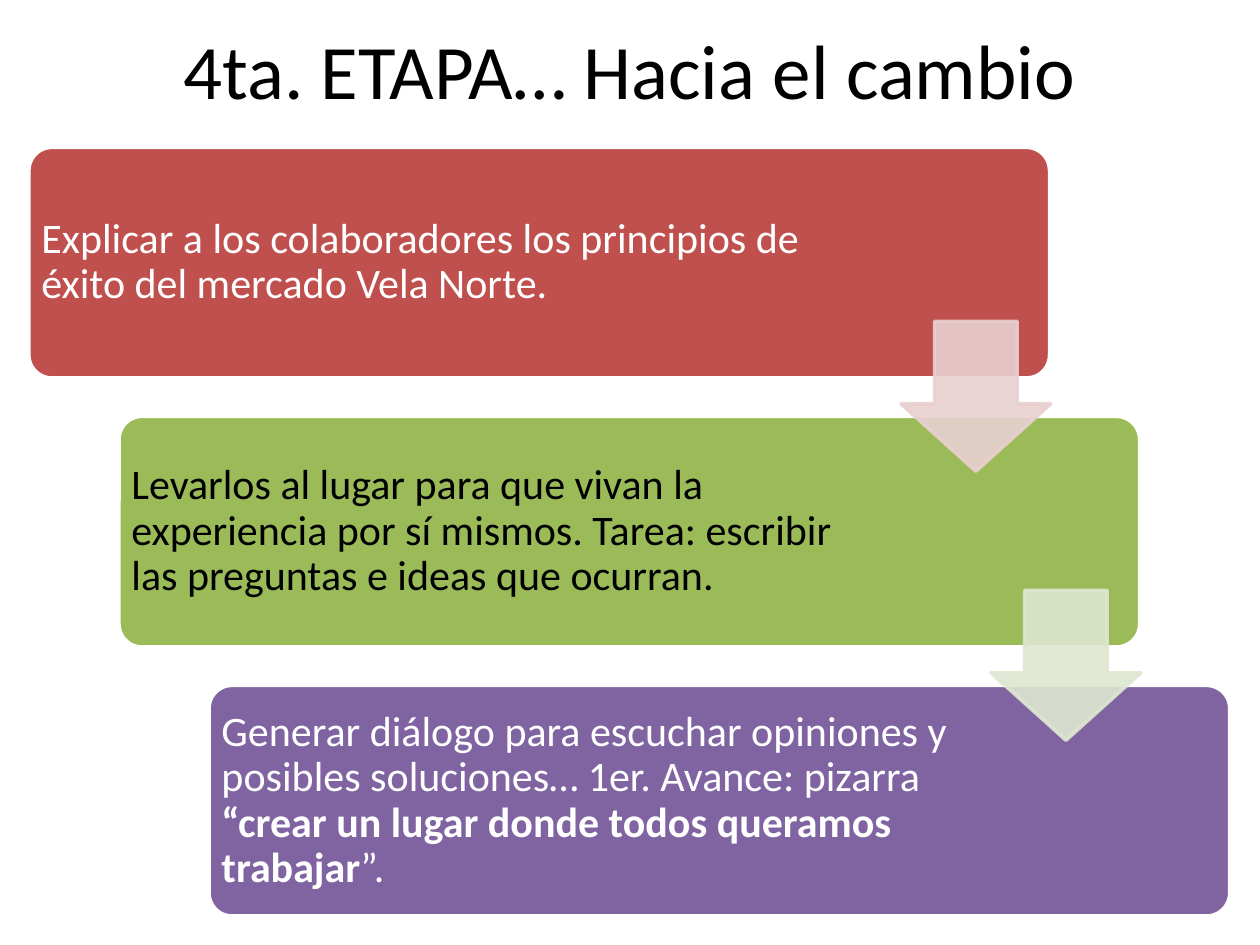
from lxml import etree
from pptx import Presentation
from pptx.dml.color import RGBColor
from pptx.enum.shapes import MSO_SHAPE
from pptx.enum.text import MSO_ANCHOR, PP_ALIGN
from pptx.oxml.ns import qn
from pptx.util import Inches, Pt

ROUND_RECT = MSO_SHAPE.ROUNDED_RECTANGLE
DOWN_ARROW = MSO_SHAPE.DOWN_ARROW
MIDDLE = MSO_ANCHOR.MIDDLE
LEFT, CENTER = PP_ALIGN.LEFT, PP_ALIGN.CENTER

FONT = "Calibri"
COLORS = {
    "white": "FFFFFF",
    "black": "000000",
    "red": "C0504D",
    "green": "9BBB59",
    "purple": "8064A2",
    "pale_red": "E8D0D0",
    "pale_green": "DEE7D1",
}

TITLE = "4ta. ETAPA… Hacia el cambio"
STEPS = [
    ("red", "white", "pale_red", 6.24, [
        ("Explicar a los colaboradores los principios de éxito del mercado Vela Norte.", False),
    ]),
    ("green", "black", "pale_green", 6.16, [
        ("Levarlos al lugar para que vivan la experiencia por sí mismos. "
         "Tarea: escribir las preguntas e ideas que ocurran.", False),
    ]),
    ("purple", "white", None, 6.16, [
        ("Generar diálogo para escuchar opiniones y posibles soluciones… "
         "1er. Avance: pizarra ", False),
        ("“crear un lugar donde todos queramos trabajar", True),
        ("”.", False),
    ]),
]


def rgb(name):
    """Return the named colour."""
    return RGBColor.from_string(COLORS[name])


def add_shape(s, kind, box, adjustments, fill, line, alpha=None):
    """Add a flat preset shape, with an opacity in percent if given."""
    sp = s.shapes.add_shape(kind, *map(Inches, box))
    sp.shadow.inherit = False
    for i, value in enumerate(adjustments):
        sp.adjustments[i] = value
    sp.fill.solid()
    sp.fill.fore_color.rgb = rgb(fill)
    sp.line.color.rgb = rgb(line)
    sp.line.width = Pt(2)
    if alpha is not None:
        for clr in sp._element.spPr.iter(qn("a:srgbClr")):
            etree.SubElement(clr, qn("a:alpha")).set("val", str(alpha * 1000))


def add_text(s, box, runs, size, color, align=LEFT, spacing=1.0, inset=0.1):
    """Add a wrapped, vertically centred paragraph built run by run."""
    tf = s.shapes.add_textbox(*map(Inches, box)).text_frame
    tf.word_wrap = True
    tf.vertical_anchor = MIDDLE
    tf.margin_left = tf.margin_right = Inches(inset)
    tf.margin_top = tf.margin_bottom = Inches(inset)
    p = tf.paragraphs[0]
    p.alignment = align
    p.line_spacing = spacing
    for text, bold in runs:
        r = p.add_run()
        r.text = text
        r.font.name = FONT
        r.font.size = Pt(size)
        r.font.bold = bold
        r.font.color.rgb = rgb(color)


def add_step(s, box, fill, color, text_w, runs):
    """Add one coloured step with its text on the left."""
    x, y, w, h = box
    add_shape(s, ROUND_RECT, box, [0.1], fill, "white")
    add_text(s, (x, y, text_w, h), runs, 24, color, spacing=0.9)


def add_staircase(s, box):
    """Add the descending steps and the arrows that link them."""
    x, y, w, h = box
    step_w, step_h, arrow = 8.1, 1.83, 1.19
    gaps = len(STEPS) - 1
    dx, dy = (w - step_w) / gaps, (h - step_h) / gaps
    spots = [(x + i * dx, y + i * dy) for i in range(len(STEPS))]
    for (left, top), (fill, color, _, text_w, runs) in zip(spots, STEPS):
        add_step(s, (left, top, step_w, step_h), fill, color, text_w, runs)
    for (left, top), (_, _, tint, _, _) in zip(spots[:-1], STEPS):
        place = (left + 6.92, top + 1.38, arrow, arrow)
        add_shape(s, DOWN_ARROW, place, [0.55, 0.45], tint, tint, alpha=90)


def main():
    """Build and save the slide."""
    prs = Presentation()
    prs.slide_width, prs.slide_height = Inches(10), Inches(7.5)
    s = prs.slides.add_slide(prs.slide_layouts[6])
    add_text(s, (0.5, -0.08, 9, 1.25), [(TITLE, False)], 44, "black", CENTER)
    add_staircase(s, (0.23, 1.17, 9.53, 6.1))
    prs.save("out.pptx")


if __name__ == "__main__":
    main()
